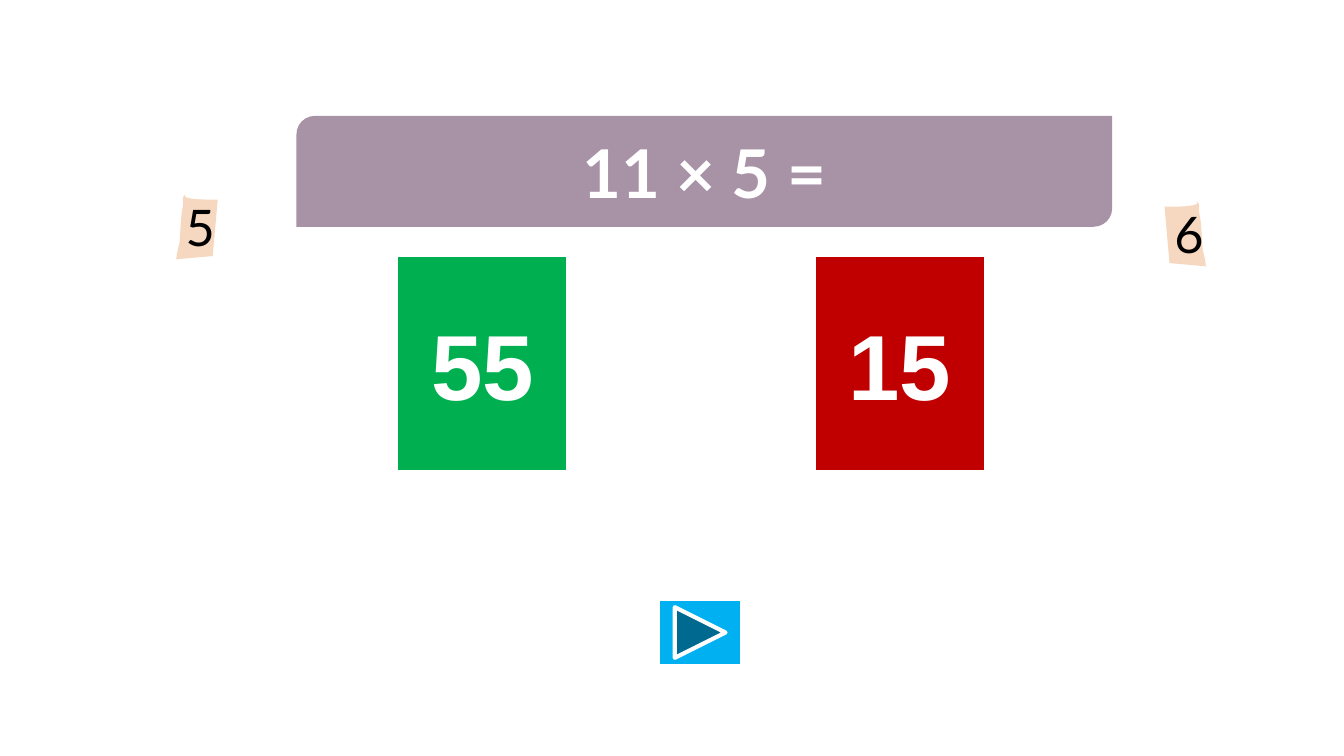
from dataclasses import dataclass
from typing import Optional

from lxml import etree
from pptx import Presentation
from pptx.dml.color import RGBColor
from pptx.enum.shapes import MSO_SHAPE
from pptx.enum.text import MSO_ANCHOR, PP_ALIGN
from pptx.oxml.ns import qn
from pptx.util import Inches, Pt

RECTANGLE = MSO_SHAPE.RECTANGLE
BANNER = MSO_SHAPE.ROUND_2_DIAG_RECTANGLE
NEXT_BUTTON = MSO_SHAPE.ACTION_BUTTON_FORWARD_OR_NEXT
MIDDLE = MSO_ANCHOR.MIDDLE
CENTER = PP_ALIGN.CENTER

WHITE = RGBColor(0xFF, 0xFF, 0xFF)
BLACK = RGBColor(0x00, 0x00, 0x00)
BLUE = RGBColor(0x00, 0xB0, 0xF0)
PEACH = RGBColor(0xF6, 0xD8, 0xC0)
MAUVE = RGBColor(0xA7, 0x92, 0xA6)
GREEN = RGBColor(0x00, 0xB0, 0x50)
RED = RGBColor(0xC0, 0x00, 0x00)

TAG_START = (0.11, 0)
TAG_SEGMENTS = [
    [(0.01, 0.07), (0.37, 0.06), (0.42, 0.06)],
    [(0.37, 0.62)],
    [(0.04, 0.65)],
    [(-0.02, 0.65), (0.01, 0.67), (0.01, 0.65)],
    [(0.01, 0.62), (0.02, 0.57), (0.04, 0.49)],
    [(0.05, 0.42), (0.05, 0.24), (0.07, 0.15)],
    [(0.09, 0.04), (0.05, 0.05), (0.11, 0)],
]
CURVE_STEPS = 12


@dataclass
class Label:
    text: str
    size: int
    color: RGBColor = WHITE
    bold: bool = True
    right_to_left: bool = False


@dataclass
class Block:
    kind: int
    left: float
    top: float
    width: float
    height: float
    fill: RGBColor
    border: float = 0
    label: Optional[Label] = None


@dataclass
class Tag:
    left: float
    top: float
    mirrored: bool
    label: Label


BLOCKS = [
    Block(NEXT_BUTTON, 6.53, 5.94, 0.83, 0.67, BLUE, 3),
    Block(BANNER, 2.94, 1.15, 8.09, 1.1, MAUVE, 0, Label("11 × 5 =", 48)),
    Block(RECTANGLE, 3.91, 2.51, 1.75, 2.2, GREEN, 6,
          Label("55", 66, right_to_left=True)),
    Block(RECTANGLE, 8.05, 2.51, 1.75, 2.2, RED, 6,
          Label("15", 66, right_to_left=True)),
]
TAGS = [
    Tag(1.74, 1.92, False, Label("5", 36, BLACK, False)),
    Tag(11.55, 1.99, True, Label("6", 36, BLACK, False)),
]


def write_label(shape, label: Label) -> None:
    frame = shape.text_frame
    frame.word_wrap = True
    frame.vertical_anchor = MIDDLE
    paragraph = frame.paragraphs[0]
    paragraph.alignment = CENTER
    run = paragraph.add_run()
    run.text = label.text
    font_format = {"name": "Lato", "size": Pt(label.size), "bold": label.bold}
    for name, value in font_format.items():
        setattr(run.font, name, value)
    run.font.color.rgb = label.color
    if label.right_to_left:
        paragraph._p.get_or_add_pPr().set("rtl", "1")
        complex_font = etree.SubElement(run._r.get_or_add_rPr(), qn("a:cs"))
        complex_font.set("typeface", "Arial")


def paint(shape, fill: RGBColor, border: float = 0) -> None:
    shape.shadow.inherit = False
    shape.fill.solid()
    shape.fill.fore_color.rgb = fill
    if border:
        shape.line.color.rgb = WHITE
        shape.line.width = Pt(border)
    else:
        shape.line.fill.background()


def draw_block(slide, block: Block) -> None:
    box = map(Inches, (block.left, block.top, block.width, block.height))
    shape = slide.shapes.add_shape(block.kind, *box)
    paint(shape, block.fill, block.border)
    if block.label:
        write_label(shape, block.label)


def tag_outline() -> list[tuple[float, float]]:
    points = [TAG_START]
    for segment in TAG_SEGMENTS:
        if len(segment) == 1:
            points += segment
            continue
        controls = [points[-1], *segment]
        for step in range(1, CURVE_STEPS + 1):
            t = step / CURVE_STEPS
            weights = ((1 - t) ** 3, 3 * t * (1 - t) ** 2,
                       3 * t ** 2 * (1 - t), t ** 3)
            points.append(tuple(
                sum(weight * control[axis]
                    for weight, control in zip(weights, controls))
                for axis in (0, 1)))
    return points


def draw_tag(slide, tag: Tag) -> None:
    points = [
        (Inches(tag.left + (0.42 - x if tag.mirrored else x)),
         Inches(tag.top + y))
        for x, y in tag_outline()
    ]
    builder = slide.shapes.build_freeform(*points[0])
    builder.add_line_segments(points[1:], close=True)
    shape = builder.convert_to_shape()
    paint(shape, PEACH)
    write_label(shape, tag.label)


def main() -> None:
    presentation = Presentation()
    presentation.slide_width = Inches(13.33)
    presentation.slide_height = Inches(7.5)
    slide = presentation.slides.add_slide(presentation.slide_layouts[6])
    for tag in TAGS:
        draw_tag(slide, tag)
    for block in BLOCKS:
        draw_block(slide, block)
    presentation.save("out.pptx")


if __name__ == "__main__":
    main()
